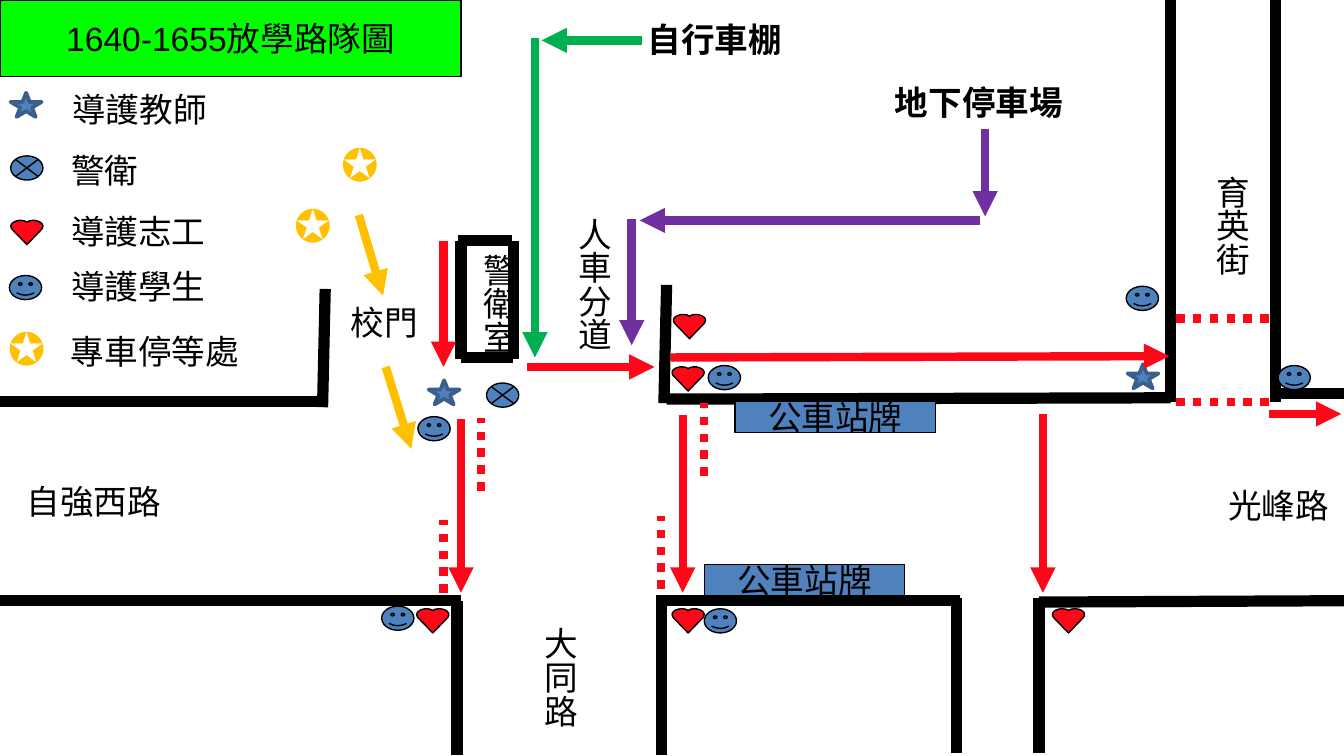
from lxml import etree
from pptx import Presentation
from pptx.dml.color import RGBColor
from pptx.enum import dml, shapes, text
from pptx.oxml import ns
from pptx.util import Inches, Pt

BLACK, RED, BLUE, GREEN = "000000", "FD0719", "4F81BD", "00B050"
PURPLE, AMBER, LIME, NAVY = "7030A0", "FFC000", "00FF00", "3A5F8C"

# Content: lines are (x1, y1, x2, y2)
TITLE = ("1640-1655放學路隊圖", (0, 0, 3.43, 0.57))
ROADS = [
    (9.49, 2.93, 10, 2.93), (0, 4.47, 3.43, 4.47), (4.88, 4.47, 7.14, 4.47),
    (4.92, 4.47, 4.92, 5.62), (3.4, 4.47, 3.4, 5.62), (9.49, 0, 9.49, 2.99),
    (0, 2.99, 2.44, 2.99), (2.42, 2.15, 2.4, 3.03), (8.71, 0, 8.71, 2.99),
    (7.12, 4.45, 7.12, 5.6), (7.73, 4.45, 7.73, 5.6), (7.73, 4.48, 10, 4.47),
    (4.96, 2.97, 8.71, 2.96), (4.96, 2.12, 4.94, 3),
]
GUARD_ROOM = [
    (3.43, 2.66, 3.82, 2.66), (3.43, 1.79, 3.43, 2.67),
    (3.82, 1.79, 3.82, 2.67), (3.41, 1.79, 3.81, 1.79),
]
ROUTES = {
    RED: [
        (9.44, 3.08, 9.98, 3.08), (5.08, 3.09, 5.08, 4.41),
        (3.43, 3.12, 3.43, 4.41), (4.99, 2.66, 8.7, 2.65),
        (3.92, 2.73, 4.87, 2.73), (3.3, 1.79, 3.3, 2.73),
        (7.76, 3.08, 7.76, 4.41),
    ],
    PURPLE: [(7.29, 1.64, 4.76, 1.64), (4.7, 1.63, 4.7, 2.57), (7.33, 0.96, 7.33, 1.61)],
    GREEN: [(3.98, 0.28, 3.98, 2.66), (4.78, 0.3, 4.03, 0.3)],
    AMBER: [(2.67, 1.6, 2.85, 2.2), (2.87, 2.73, 3.06, 3.34)],
}
CROSSINGS = [
    (9.44, 2.99, 8.71, 2.99), (9.44, 2.37, 8.71, 2.37), (3.3, 4.41, 3.3, 3.87),
    (5.24, 3.54, 5.24, 3), (3.58, 3.65, 3.58, 3.11), (4.92, 4.38, 4.92, 3.84),
]
BUS_STOPS = [(5.24, 4.2), (5.47, 2.99)]

# Marker positions, the legend entry first
TEACHERS = [(0.08, 0.69), (3.19, 2.83), (8.39, 2.71)]
GUARDS = [(0.08, 1.16), (3.62, 2.85)]
VOLUNTEERS = [(0.08, 1.64), (7.83, 4.53), (5, 4.53), (5, 2.73), (3.1, 4.53), (5.01, 2.34)]
STUDENTS = [(0.07, 2.05), (5.27, 2.72), (5.24, 4.53), (9.51, 2.72),
            (2.84, 4.51), (8.38, 2.13), (3.11, 3.1)]
BUS_WAITS = [(-0.04, 2.34), (2.44, 0.97), (2.09, 1.42)]
# Right half of the heart from its top centre, in hundredths of an inch
HEART = [(0, 1.4), (0.8, 0.8), (2, 0.3), (4, 0), (6, 0), (8, 0.5), (9.5, 1.1),
         (10.8, 2), (11.6, 3), (11.9, 4), (11.8, 5), (11.2, 6.4), (0, 18)]

LABELS = [
    ("導護教師", 0.44, 0.61, 1.33), ("警衛", 0.43, 1.07, 0.71),
    ("導護志工", 0.43, 1.52, 1.35), ("導護學生", 0.43, 1.93, 1.21),
    ("專車停等處", 0.43, 2.41, 1.46), ("校門", 2.51, 2.2, 0.71),
    ("自強西路", 0.1, 3.53, 1.21), ("光峰路", 9.04, 3.56, 0.96),
]
BOLD_LABELS = [("地下停車場", 6.56, 0.56, 1.53), ("自行車棚", 4.72, 0.09, 1.26)]
VERTICAL_LABELS = [
    ("大同路", 3.87, 4.57, 0.86), ("育英街", 8.87, 1.21, 0.86),
    ("人車分道", 4.12, 1.52, 1.11), ("警衛室", 3.41, 1.79, 0.86),
]


def color(value):
    return RGBColor.from_string(value)


def paint(shape, fill, line=BLACK, width=0.75):
    shape.shadow.inherit = False
    shape.fill.solid()
    shape.fill.fore_color.rgb = color(fill)
    shape.line.color.rgb = color(line)
    shape.line.width = Pt(width)


def write(shape, words, ink=BLACK, center=False, wrap=True, **font):
    frame = shape.text_frame
    frame.word_wrap = wrap
    frame.auto_size = text.MSO_AUTO_SIZE.NONE
    frame.text = words
    paragraph = frame.paragraphs[0]
    if center:
        frame.vertical_anchor = text.MSO_ANCHOR.MIDDLE
        paragraph.alignment = text.PP_ALIGN.CENTER
    run = paragraph.runs[0]
    for name, value in ({"name": "Arial", "size": Pt(18)} | font).items():
        setattr(run.font, name, value)
    run.font.color.rgb = color(ink)


def add_label(words, left, top, width, height=0.4, **options):
    box = slide.shapes.add_textbox(*map(Inches, (left, top, width, height)))
    write(box, words, **options)
    return box


def add_line(ends, ink, width, arrow=False, dotted=False):
    line = slide.shapes.add_connector(shapes.MSO_CONNECTOR.STRAIGHT, *map(Inches, ends))
    line.line.color.rgb = color(ink)
    line.line.width = Pt(width)
    if dotted:
        line.line.dash_style = dml.MSO_LINE.ROUND_DOT
        line.line._ln.find(ns.qn("a:prstDash")).set("val", "sysDot")
    if arrow:
        etree.SubElement(line.line._ln, ns.qn("a:tailEnd"), type="triangle")
    etree.SubElement(line._element.spPr, ns.qn("a:effectLst"))


def add_preset(kind, left, top, width=0.24, height=0.18):
    return slide.shapes.add_shape(kind, *map(Inches, (left, top, width, height)))


def add_heart(left, top):
    outline = HEART + [(-x, y) for x, y in HEART[-2:0:-1]]
    points = [(Inches(left + 0.12 + x / 100), Inches(top + y / 100)) for x, y in outline]
    builder = slide.shapes.build_freeform(*points[0])
    builder.add_line_segments(points[1:], close=True)
    paint(builder.convert_to_shape(), RED)


presentation = Presentation()
presentation.slide_width = Inches(10)
presentation.slide_height = Inches(10 * 9 / 16)
slide = presentation.slides.add_slide(presentation.slide_layouts[5])

# Title
title = slide.shapes.title
title.left, title.top, title.width, title.height = map(Inches, TITLE[1])
paint(title, LIME)
write(title, TITLE[0], center=True, wrap=False)

# Streets, guard room and bus stops
for ends in ROADS + GUARD_ROOM:
    add_line(ends, BLACK, 6)
for left, top in BUS_STOPS:
    stop = add_preset(shapes.MSO_SHAPE.RECTANGLE, left, top, 1.49, 0.23)
    paint(stop, BLUE)
    write(stop, "公車站牌", center=True, wrap=False)

# People
for spot in TEACHERS:
    paint(add_preset(shapes.MSO_SHAPE.STAR_5_POINT, *spot, 0.23), BLUE, NAVY, 2)
for spot in GUARDS:
    paint(add_preset(shapes.MSO_SHAPE.FLOWCHART_SUMMING_JUNCTION, *spot), BLUE)
for spot in STUDENTS:
    paint(add_preset(shapes.MSO_SHAPE.SMILEY_FACE, *spot), BLUE)
for spot in VOLUNTEERS:
    add_heart(*spot)
for spot in BUS_WAITS:
    add_label("✪", *spot, 0.47, 0.5, ink=AMBER, size=Pt(24))

# Crossings and walking routes
for ends in CROSSINGS:
    add_line(ends, RED, 4.5, dotted=True)
for ink, routes in ROUTES.items():
    for ends in routes:
        add_line(ends, ink, 4.5, arrow=True)

# Labels
for label in LABELS:
    add_label(*label)
for label in BOLD_LABELS:
    add_label(*label, name="Noto Sans CJK SC", bold=True)
for words, left, top, height in VERTICAL_LABELS:
    box = add_label(words, left, top, 0.5, height, wrap=False)
    box.text_frame._txBody.bodyPr.set("vert", "eaVert")

presentation.save("out.pptx")
